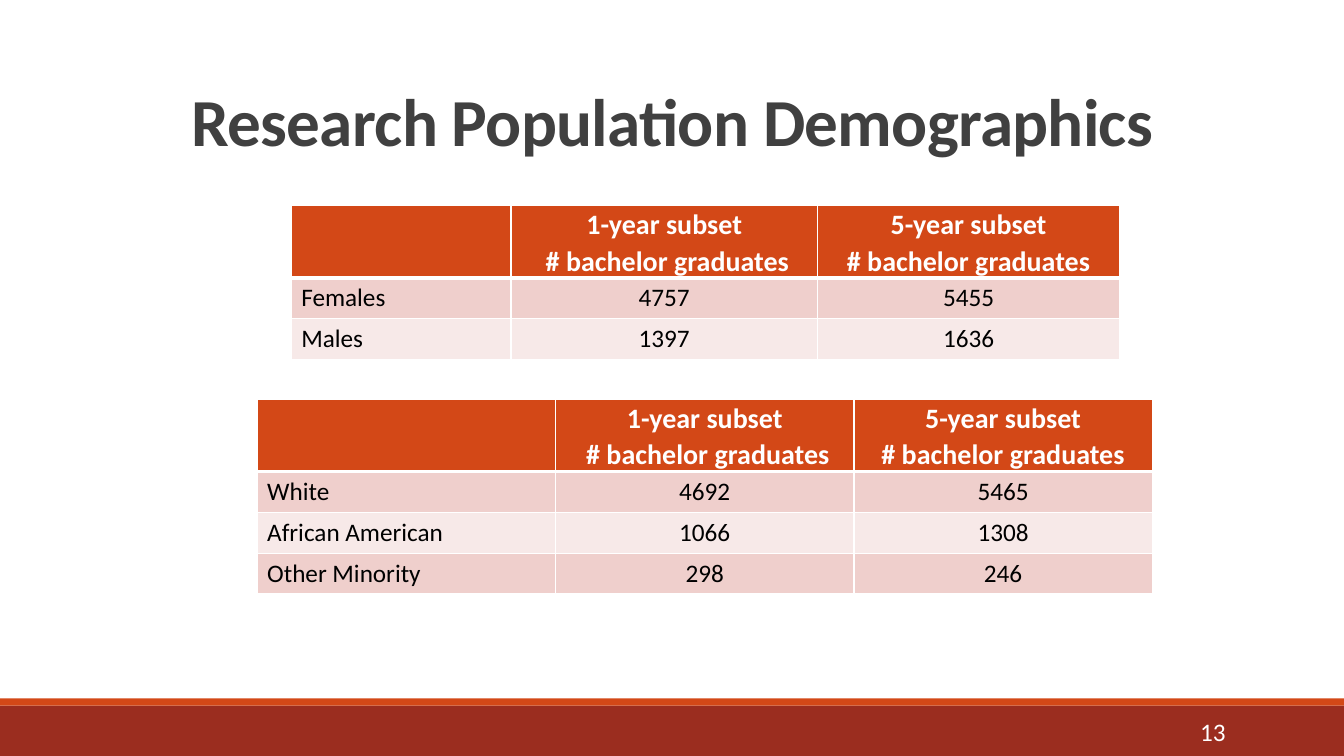
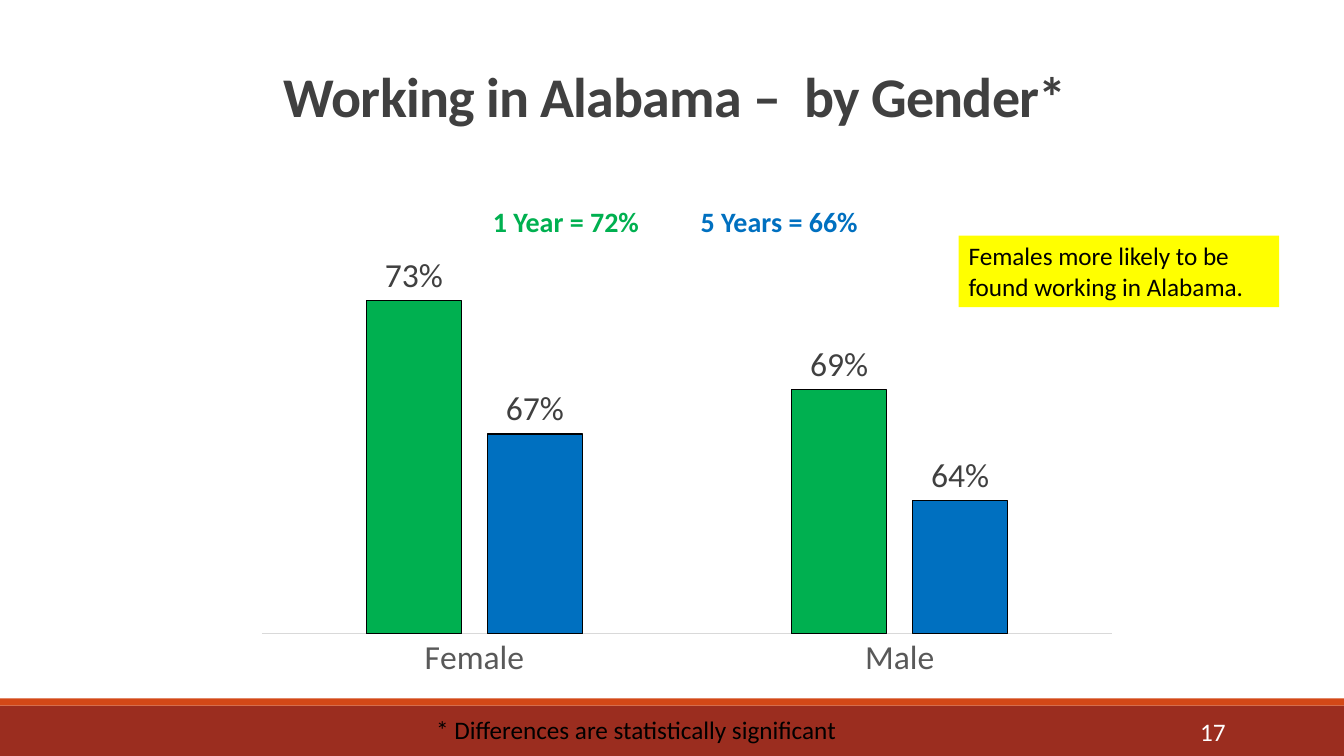
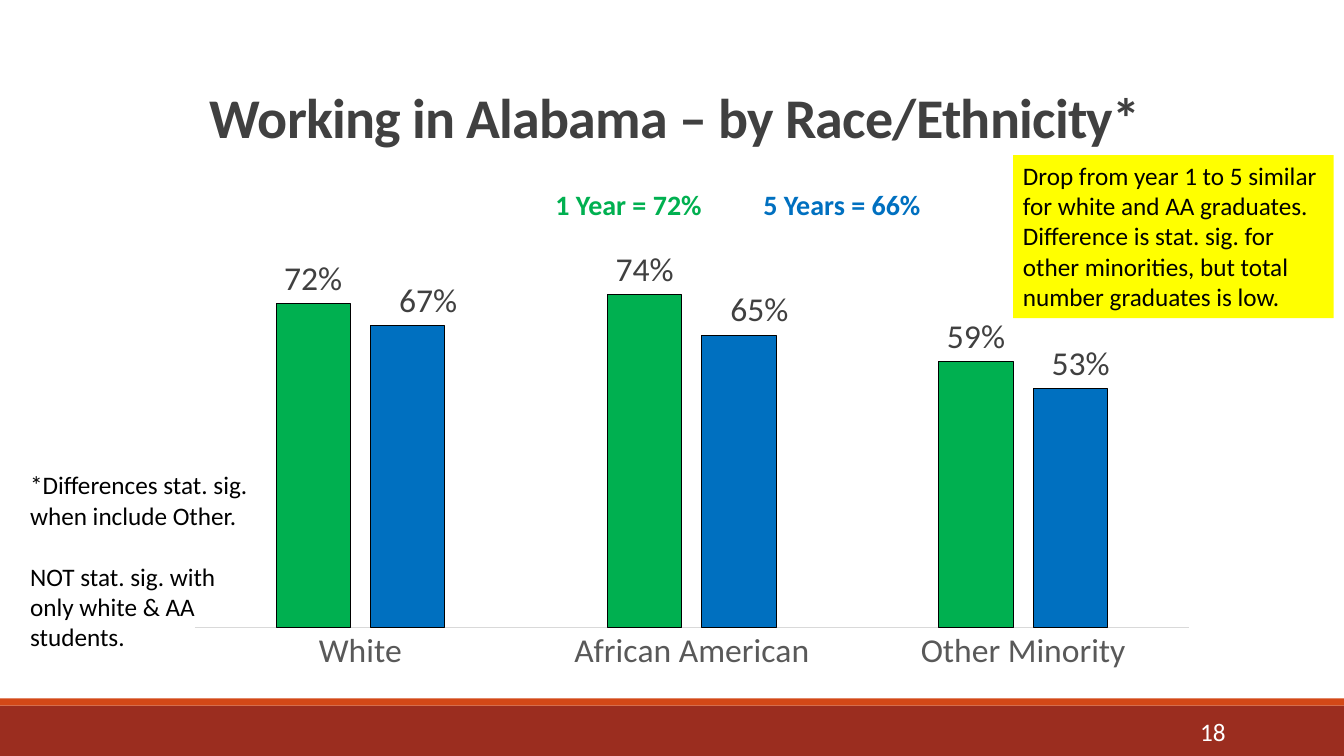
from lxml.etree import SubElement
from pptx import Presentation
from pptx.chart.data import CategoryChartData
from pptx.dml.color import RGBColor
from pptx.enum.chart import XL_CHART_TYPE, XL_LABEL_POSITION, XL_TICK_MARK
from pptx.enum.shapes import MSO_SHAPE
from pptx.enum.text import MSO_ANCHOR, PP_ALIGN
from pptx.oxml.ns import qn
from pptx.util import Cm, Pt

WIDTH, HEIGHT = 33.87, 19.05
FONT = "Calibri"
BAND, ACCENT = "9B2D1F", "D34817"
STRIPES = ("EFCFCC", "F7E9E8")
GREEN, BLUE, YELLOW = "00B050", "0070C0", "FFFF00"
BLACK, WHITE, DARK, GRAY, PALE = "000000", "FFFFFF", "404040", "595959", "D9D9D9"


def color(value):
    return RGBColor.from_string(value)


def style_font(font, size, tone, bold=False):
    font.name = FONT
    font.size = Pt(size)
    font.bold = bold
    font.color.rgb = color(tone)


def add_run(paragraph, text, size, tone, bold=False):
    run = paragraph.add_run()
    run.text = text
    style_font(run.font, size, tone, bold)
    return run


def add_layout(parent, index, **values):
    for old in parent.findall(qn("c:layout")):
        parent.remove(old)
    layout = SubElement(parent, qn("c:layout"))
    parent.insert(index, layout)
    manual = SubElement(layout, qn("c:manualLayout"))
    for name, value in values.items():
        SubElement(manual, qn(f"c:{name}")).set("val", str(value))


def set_borders(cell, **widths):
    properties = cell._tc.get_or_add_tcPr()
    for side in "LRTB":
        line = SubElement(properties, qn(f"a:ln{side}"), w=str(Pt(widths.get(side, 1))))
        fill = SubElement(line, qn("a:solidFill"))
        SubElement(fill, qn("a:srgbClr"), val=WHITE)


class Deck:
    def __init__(self):
        self.presentation = Presentation()
        self.presentation.slide_width = Cm(WIDTH)
        self.presentation.slide_height = Cm(HEIGHT)
        self.slide = None

    def start_slide(self, title, number, box, size=40):
        self.slide = self.presentation.slides.add_slide(self.presentation.slide_layouts[6])
        self.rectangle((0, 17.78, WIDTH, 1.27), BAND)
        self.rectangle((0, 17.6, WIDTH, 0.18), ACCENT)
        frame = self.text_frame(box, MSO_ANCHOR.BOTTOM)
        paragraph = frame.paragraphs[0]
        paragraph.alignment = PP_ALIGN.CENTER
        paragraph.line_spacing = 0.85
        run = add_run(paragraph, title, size, DARK, True)
        run.font._element.set("spc", "-50")
        frame = self.text_frame((27.51, 17.93, 3.63, 1.02), MSO_ANCHOR.MIDDLE)
        frame.paragraphs[0].alignment = PP_ALIGN.RIGHT
        add_run(frame.paragraphs[0], number, 18, WHITE)

    def rectangle(self, box, fill):
        shape = self.slide.shapes.add_shape(MSO_SHAPE.RECTANGLE, *map(Cm, box))
        shape.shadow.inherit = False
        shape.fill.solid()
        shape.fill.fore_color.rgb = color(fill)
        shape.line.fill.background()
        return shape

    def text_frame(self, box, anchor=MSO_ANCHOR.TOP):
        frame = self.slide.shapes.add_textbox(*map(Cm, box)).text_frame
        frame.word_wrap = True
        frame.vertical_anchor = anchor
        return frame

    def note(self, box, *texts):
        self.write_note(self.text_frame(box), texts)

    def callout(self, box, text):
        frame = self.rectangle(box, YELLOW).text_frame
        frame.word_wrap = True
        frame.vertical_anchor = MSO_ANCHOR.TOP
        self.write_note(frame, [text])

    def write_note(self, frame, texts):
        for index, text in enumerate(texts):
            paragraph = frame.add_paragraph() if index else frame.paragraphs[0]
            paragraph.alignment = PP_ALIGN.LEFT
            paragraph.space_before = Pt(22 if index else 0)
            add_run(paragraph, text, 18, BLACK)

    def averages(self, left, top):
        frame = self.text_frame((left, top, 27.94, 1.2))
        frame.margin_left = frame.margin_right = 0
        paragraph = frame.paragraphs[0]
        paragraph.alignment = PP_ALIGN.CENTER
        paragraph.line_spacing = 0.9
        add_run(paragraph, "1 Year = 72% \t ", 20, GREEN, True)
        add_run(paragraph, "5 Years = 66%", 20, BLUE, True)

    def graduates_table(self, left, top, widths, rows):
        header_height, row_height = 1.82, 1.03
        height = header_height + row_height * len(rows)
        table = self.slide.shapes.add_table(
            len(rows) + 1, len(widths), Cm(left), Cm(top), Cm(sum(widths)), Cm(height)
        ).table
        for column, width in zip(table.columns, widths):
            column.width = Cm(width)
        for index, row in enumerate(table.rows):
            row.height = Cm(row_height if index else header_height)
        headers = (
            (),
            ("1-year subset", " # bachelor graduates"),
            ("5-year subset", "# bachelor graduates"),
        )
        for column, lines in enumerate(headers):
            self.header_cell(table.cell(0, column), lines)
        for index, row in enumerate(rows):
            for column, text in enumerate(row):
                cell = table.cell(index + 1, column)
                set_borders(cell, T=1 if index else 3)
                cell.fill.solid()
                cell.fill.fore_color.rgb = color(STRIPES[index % 2])
                paragraph = cell.text_frame.paragraphs[0]
                paragraph.alignment = PP_ALIGN.CENTER if column else PP_ALIGN.LEFT
                add_run(paragraph, text, 18, BLACK)

    def header_cell(self, cell, lines):
        set_borders(cell, B=3)
        cell.fill.solid()
        cell.fill.fore_color.rgb = color(ACCENT)
        cell.vertical_anchor = MSO_ANCHOR.BOTTOM
        cell.margin_left = cell.margin_right = Cm(0.18)
        cell.margin_top = cell.margin_bottom = 0
        for index, line in enumerate(lines):
            frame = cell.text_frame
            paragraph = frame.add_paragraph() if index else frame.paragraphs[0]
            paragraph.alignment = PP_ALIGN.CENTER
            paragraph.line_spacing = 1.07
            add_run(paragraph, line, 20, WHITE, True)

    def column_chart(self, box, plot_box, limits, categories, values, label_shifts=()):
        data = CategoryChartData(number_format="0%")
        data.categories = categories
        for index, series_values in enumerate(values, 1):
            data.add_series(f"Series {index}", series_values)
        chart = self.slide.shapes.add_chart(
            XL_CHART_TYPE.COLUMN_CLUSTERED, *map(Cm, box), data
        ).chart
        chart.has_legend = False
        chart.has_title = False
        style_font(chart.font, 10, BLACK)
        value_axis = chart.value_axis
        value_axis.minimum_scale, value_axis.maximum_scale = limits
        value_axis.has_major_gridlines = False
        value_axis.visible = False
        category_axis = chart.category_axis
        category_axis.major_tick_mark = XL_TICK_MARK.NONE
        category_axis.format.line.color.rgb = color(PALE)
        category_axis.format.line.width = Pt(0.75)
        style_font(category_axis.tick_labels.font, 24, GRAY)
        plot = chart.plots[0]
        plot.gap_width = 219
        plot.overlap = -27
        plot.vary_by_categories = False
        for series, fill in zip(plot.series, (GREEN, BLUE)):
            self.style_series(series, fill)
        for index, shift in enumerate(label_shifts):
            label = plot.series[1].points[index].data_label
            style_font(label.font, 24, DARK)
            label.position = XL_LABEL_POSITION.OUTSIDE_END
            element = plot.series[1].data_labels._element.findall(qn("c:dLbl"))[index]
            add_layout(element, 1, x=shift, y=0)
        x, y, w, h = plot_box
        add_layout(
            chart._chartSpace.chart.plotArea, 0,
            layoutTarget="inner", xMode="edge", yMode="edge", x=x, y=y, w=w, h=h,
        )

    def style_series(self, series, fill):
        series.format.fill.solid()
        series.format.fill.fore_color.rgb = color(fill)
        series.format.line.color.rgb = color(BLACK)
        series.format.line.width = Pt(0.75)
        labels = series.data_labels
        labels.show_value = True
        labels.number_format = "0%"
        labels.number_format_is_linked = False
        labels.position = XL_LABEL_POSITION.OUTSIDE_END
        style_font(labels.font, 24, DARK)


def main():
    deck = Deck()

    deck.start_slide("Research Population Demographics", "13", (2.34, 1.63, 29.21, 2.54), 48)
    deck.graduates_table(
        7.34, 5.18, (5.54, 7.72, 7.62),
        (("Females", "4757", "5455"), ("Males", "1397", "1636")),
    )
    deck.graduates_table(
        6.48, 10.06, (7.52,) * 3,
        (
            ("White", "4692", "5465"),
            ("African American", "1066", "1308"),
            ("Other Minority", "298", "246"),
        ),
    )

    deck.start_slide("Working in Alabama –  by Gender*", "17", (3.05, 0.79, 27.94, 2.59))
    deck.averages(3.05, 5.13)
    deck.column_chart(
        (6.15, 6.45, 22.33, 11.2), (0.02, 0.05, 0.96, 0.8), (0.58, 0.74),
        ("Female", "Male"), ((0.73, 0.69), (0.67, 0.64)),
    )
    deck.note((10.74, 17.88, 11.91, 1.02), "* Differences are statistically significant")
    deck.callout((24.16, 5.94, 8.08, 1.8), "Females more likely to be found working in Alabama.")

    deck.start_slide("Working in Alabama – by Race/Ethnicity*", "18", (3.05, 0.79, 27.94, 3.12))
    deck.averages(4.63, 4.7)
    deck.column_chart(
        (4.65, 6.3, 25.83, 11.71), (0.01, 0.02, 0.97, 0.79), (0, 0.81),
        ("White", "African American", "Other Minority"),
        ((0.72, 0.74, 0.59), (0.67, 0.65, 0.53)),
        label_shifts=(0.02, 0.02, 0.01),
    )
    deck.note(
        (0.51, 11.71, 6.15, 4.88),
        "*Differences stat. sig. when include Other.",
        "NOT stat. sig. with only white & AA students.",
    )
    deck.callout(
        (25.53, 3.91, 8.08, 4.11),
        "Drop from year 1 to 5 similar for white and AA graduates. Difference is stat. sig. "
        "for other minorities, but total number graduates is low.",
    )

    deck.presentation.save("out.pptx")


if __name__ == "__main__":
    main()
